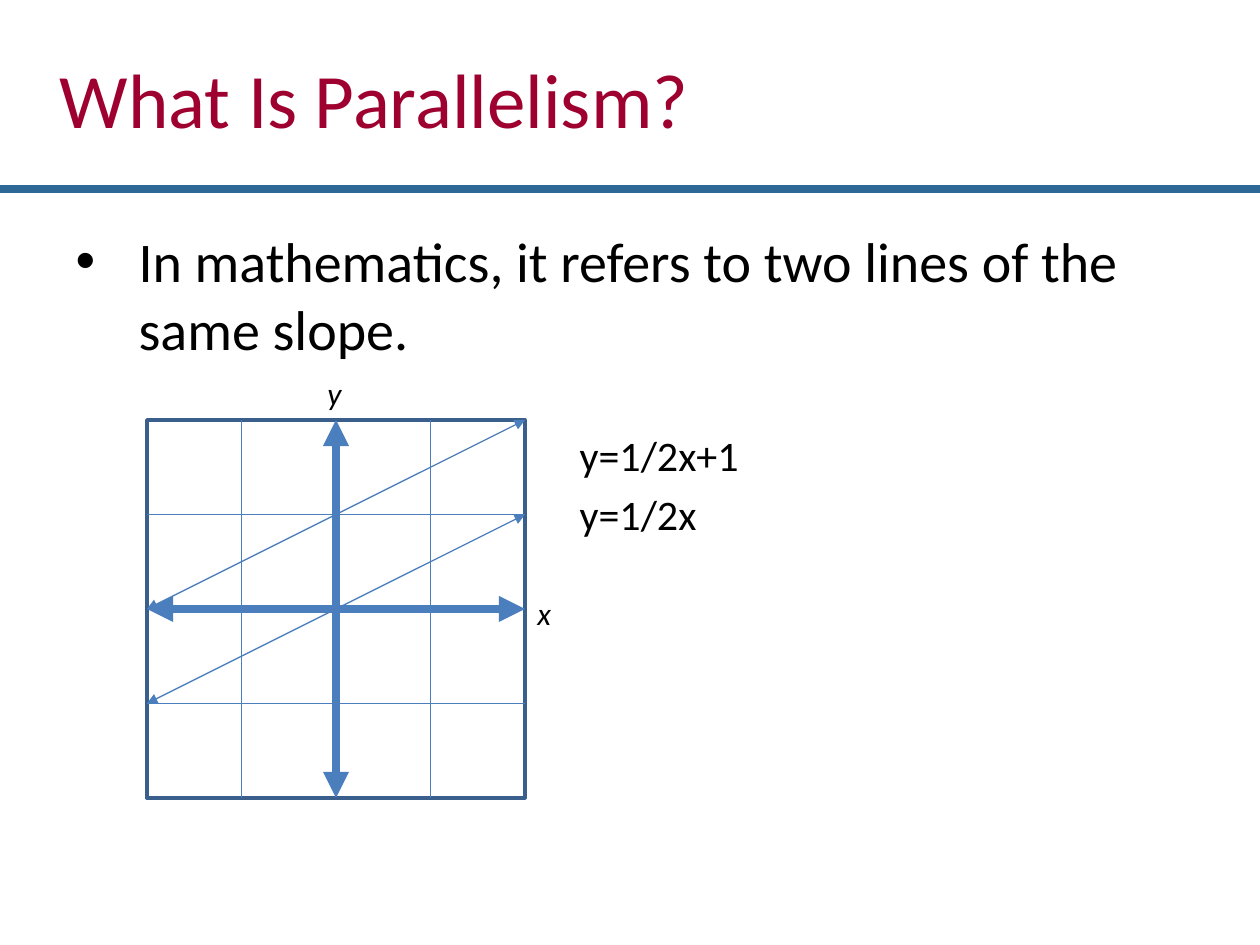
import pptx
import pptx.util
import pptx.dml.color
import pptx.enum.shapes
import pptx.enum.text
import pptx.oxml.ns
import lxml.etree

Pt = pptx.util.Pt
qn = pptx.oxml.ns.qn
FONT = "Calibri"
COLORS = {"title": "9E012F", "rule": "2D6897", "text": "000000",
          "line": "4B7EBC", "frame": "3A5F8C"}


def rgb(name):
    return pptx.dml.color.RGBColor.from_string(COLORS[name])


def add_run(paragraph, text, size, color="text", italic=None):
    run = paragraph.add_run()
    run.text = text
    run.font.name = FONT
    run.font.size = Pt(size)
    run.font.italic = italic
    run.font.color.rgb = rgb(color)


def place(shape, box):
    shape.left, shape.top, shape.width, shape.height = map(Pt, box)


def set_indent(paragraph, margin, indent, bullet=None):
    properties = paragraph._p.get_or_add_pPr()
    properties.set("marL", str(Pt(margin)))
    properties.set("indent", str(Pt(indent)))
    if bullet:
        lxml.etree.SubElement(properties, qn("a:buChar")).set("char", bullet)
    else:
        lxml.etree.SubElement(properties, qn("a:buNone"))


def add_line(slide, start, end, color, width, arrows=False):
    line = slide.shapes.add_connector(
        pptx.enum.shapes.MSO_CONNECTOR.STRAIGHT, *map(Pt, (*start, *end)))
    line.line.color.rgb = rgb(color)
    line.line.width = Pt(width)
    if arrows:
        outline = line.line._get_or_add_ln()
        for tag in ("a:headEnd", "a:tailEnd"):
            lxml.etree.SubElement(outline, qn(tag)).set("type", "triangle")
    lxml.etree.SubElement(line._element.spPr, qn("a:effectLst"))
    return line


def add_heading(slide, box):
    left, top, width, height = box
    heading = slide.shapes.title
    place(heading, box)
    frame = heading.text_frame
    frame.auto_size = pptx.enum.text.MSO_AUTO_SIZE.NONE
    frame.vertical_anchor = pptx.enum.text.MSO_ANCHOR.MIDDLE
    paragraph = frame.paragraphs[0]
    paragraph.alignment = pptx.enum.text.PP_ALIGN.LEFT
    set_indent(paragraph, 27, 0)
    add_run(paragraph, "What Is Parallelism?", 44, "title")
    rule_y = top + height - 3.6
    add_line(slide, (left, rule_y), (left + width, rule_y), "rule", 5)


def add_definition(slide, box):
    body = slide.placeholders[1]
    place(body, box)
    frame = body.text_frame
    frame.auto_size = pptx.enum.text.MSO_AUTO_SIZE.NONE
    definition = frame.paragraphs[0]
    definition.space_before = Pt(6.4)
    set_indent(definition, 36, -36, "•")
    add_run(definition, "In mathematics, it refers to two lines of the same slope.", 32)
    for text, gap in (("y=1/2x+1", 39), ("y=1/2x", 4.8)):
        equation = frame.add_paragraph()
        equation.level = 8
        equation.space_before = Pt(gap)
        set_indent(equation, 306, -18)
        add_run(equation, text, 24)


def add_axis_label(slide, text, left, top):
    label = slide.shapes.add_textbox(Pt(left), Pt(top), Pt(24), Pt(29))
    label.text_frame.word_wrap = True
    label.text_frame.auto_size = pptx.enum.text.MSO_AUTO_SIZE.SHAPE_TO_FIT_TEXT
    add_run(label.text_frame.paragraphs[0], text, 18, italic=True)


def add_graph(slide, box):
    left, top, width, height = box
    cells = 4

    def at(column, row):
        return left + column * width / cells, top + row * height / cells

    frame = slide.shapes.add_shape(
        pptx.enum.shapes.MSO_SHAPE.RECTANGLE, *map(Pt, box))
    frame.shadow.inherit = False
    frame.fill.background()
    frame.line.color.rgb = rgb("frame")
    frame.line.width = Pt(2)

    for step in (1, 3):
        add_line(slide, at(0, step), at(cells, step), "line", 0.75)
        add_line(slide, at(step, 0), at(step, cells), "line", 0.75)

    add_line(slide, at(0, 3), at(4, 1), "line", 0.75, arrows=True)
    upper = add_line(slide, at(0, 2), at(4, 0), "line", 0.75, arrows=True)
    upper.begin_connect(frame, 1)

    for start, end, first, last in ((at(2, 0), at(2, 4), 0, 2),
                                    (at(0, 2), at(4, 2), 1, 3)):
        axis = add_line(slide, start, end, "line", 5, arrows=True)
        axis.begin_connect(frame, first)
        axis.end_connect(frame, last)

    add_axis_label(slide, "x", left + width, top + height / 2 - 12)
    add_axis_label(slide, "y", left + width / 2 - 12, top - 30)


def main():
    presentation = pptx.Presentation()
    presentation.slide_width = Pt(720)
    presentation.slide_height = Pt(540)
    slide = presentation.slides.add_slide(presentation.slide_layouts[1])
    add_heading(slide, (0, 0, 720, 111.6))
    add_definition(slide, (36, 126, 648, 356.4))
    add_graph(slide, (84, 240, 216, 216))
    presentation.save("out.pptx")


if __name__ == "__main__":
    main()
